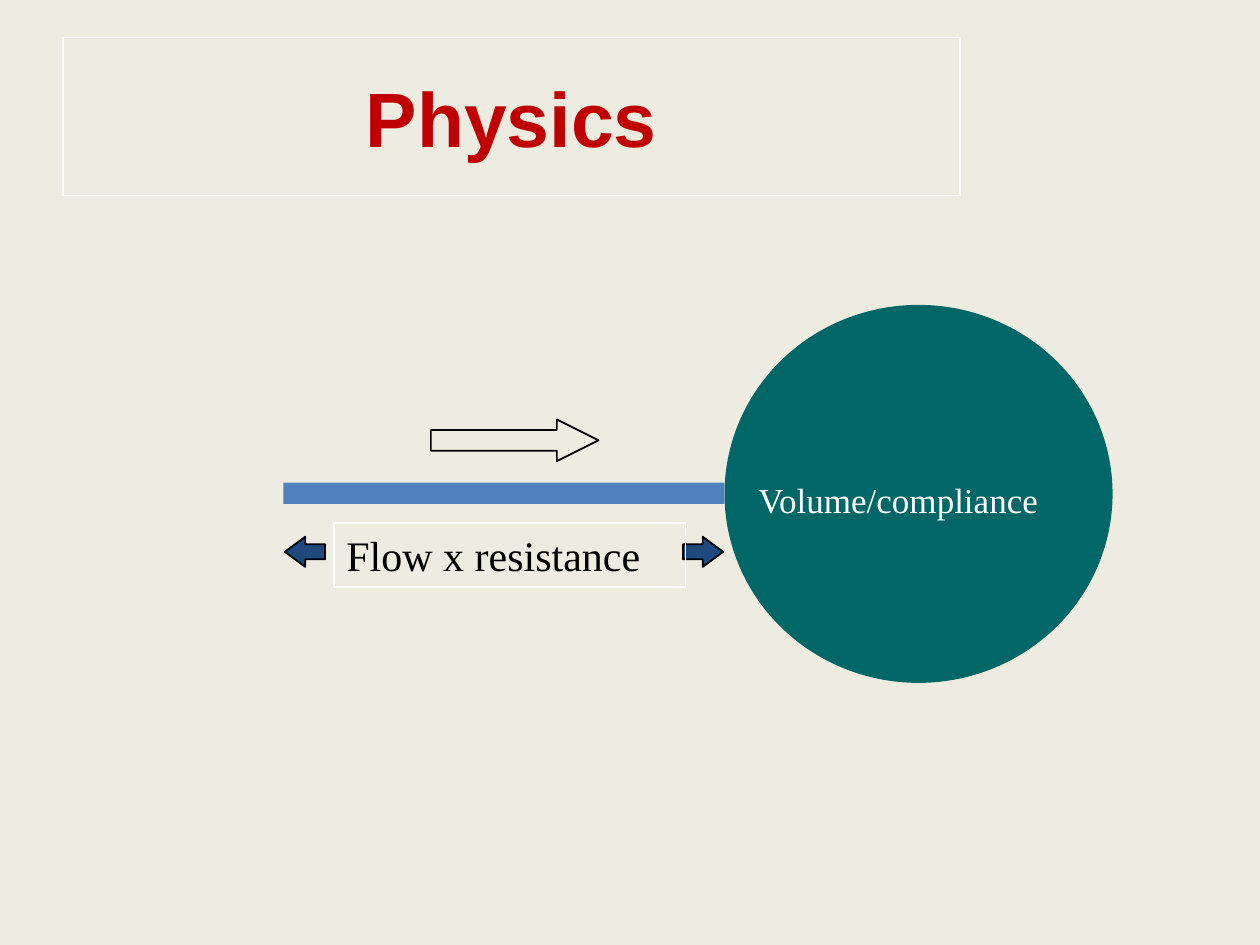
from pptx import Presentation
from pptx.dml.color import RGBColor
from pptx.enum.shapes import MSO_SHAPE
from pptx.enum.text import MSO_ANCHOR, MSO_AUTO_SIZE, PP_ALIGN
from pptx.util import Inches, Pt

COLORS = {
    "background": "EEECE1",
    "title": "C00000",
    "frame": "FFFFFF",
    "chamber": "006666",
    "tube": "4F81BD",
    "span": "1F497D",
    "ink": "000000",
    "light": "FFFFFF",
}
TITLE_FONT = "Arial"
LABEL_FONT = "Times New Roman"


def rgb(name):
    return RGBColor.from_string(COLORS[name])


def set_outline(shape, color, width):
    shape.line.color.rgb = rgb(color)
    shape.line.width = Pt(width)


def add_run(paragraph, text, font, size, color, bold=False):
    run = paragraph.add_run()
    run.text = text
    run.font.name = font
    run.font.size = Pt(size)
    run.font.bold = bold
    run.font.color.rgb = rgb(color)


def add_title(slide, text):
    title = slide.shapes.title
    title.left, title.top = Inches(0.5), Inches(0.3)
    title.width, title.height = Inches(7.12), Inches(1.25)
    set_outline(title, "frame", 0.75)
    frame = title.text_frame
    frame.word_wrap = True
    frame.vertical_anchor = MSO_ANCHOR.MIDDLE
    paragraph = frame.paragraphs[0]
    paragraph.alignment = PP_ALIGN.CENTER
    add_run(paragraph, text, TITLE_FONT, 44, "title", bold=True)


def add_figure(slide, preset, box, fill=None, outline=None, head=None):
    """Add a preset shape; head is an arrowhead's length relative to its height."""
    figure = slide.shapes.add_shape(preset, *map(Inches, box))
    figure.shadow.inherit = False
    if fill:
        figure.fill.solid()
        figure.fill.fore_color.rgb = rgb(fill)
    else:
        figure.fill.background()
    if outline:
        set_outline(figure, outline, 1)
    else:
        figure.line.fill.background()
    if head:
        figure.adjustments[1] = head


def add_label(slide, text, box, size, color, wrap=True, border=None):
    label = slide.shapes.add_textbox(*map(Inches, box))
    if border:
        set_outline(label, border, 0.75)
    frame = label.text_frame
    frame.word_wrap = wrap
    frame.auto_size = MSO_AUTO_SIZE.SHAPE_TO_FIT_TEXT
    paragraph = frame.paragraphs[0]
    paragraph.alignment = PP_ALIGN.LEFT
    add_run(paragraph, text, LABEL_FONT, size, color)


def main():
    deck = Presentation()
    deck.slide_width, deck.slide_height = Inches(10), Inches(7.5)
    slide = deck.slides.add_slide(deck.slide_layouts[5])
    slide.background.fill.solid()
    slide.background.fill.fore_color.rgb = rgb("background")

    add_title(slide, "Physics")
    add_figure(slide, MSO_SHAPE.OVAL, (5.75, 2.42, 3.08, 3), "chamber")
    add_figure(slide, MSO_SHAPE.RECTANGLE, (2.25, 3.83, 3.5, 0.17), "tube")
    for preset, left in ((MSO_SHAPE.LEFT_ARROW, 2.26), (MSO_SHAPE.RIGHT_ARROW, 5.42)):
        add_figure(slide, preset, (left, 4.26, 0.32, 0.24), "span", "ink", head=0.68)
    add_label(slide, "Flow x resistance", (2.65, 4.15, 2.79, 0.51), 24, "ink",
              wrap=False, border="frame")
    add_label(slide, "Volume/compliance", (5.92, 3.75, 2.83, 0.43), 20, "light")
    add_figure(slide, MSO_SHAPE.RIGHT_ARROW, (3.42, 3.33, 1.33, 0.33),
               outline="ink", head=1)

    deck.save("out.pptx")


if __name__ == "__main__":
    main()
